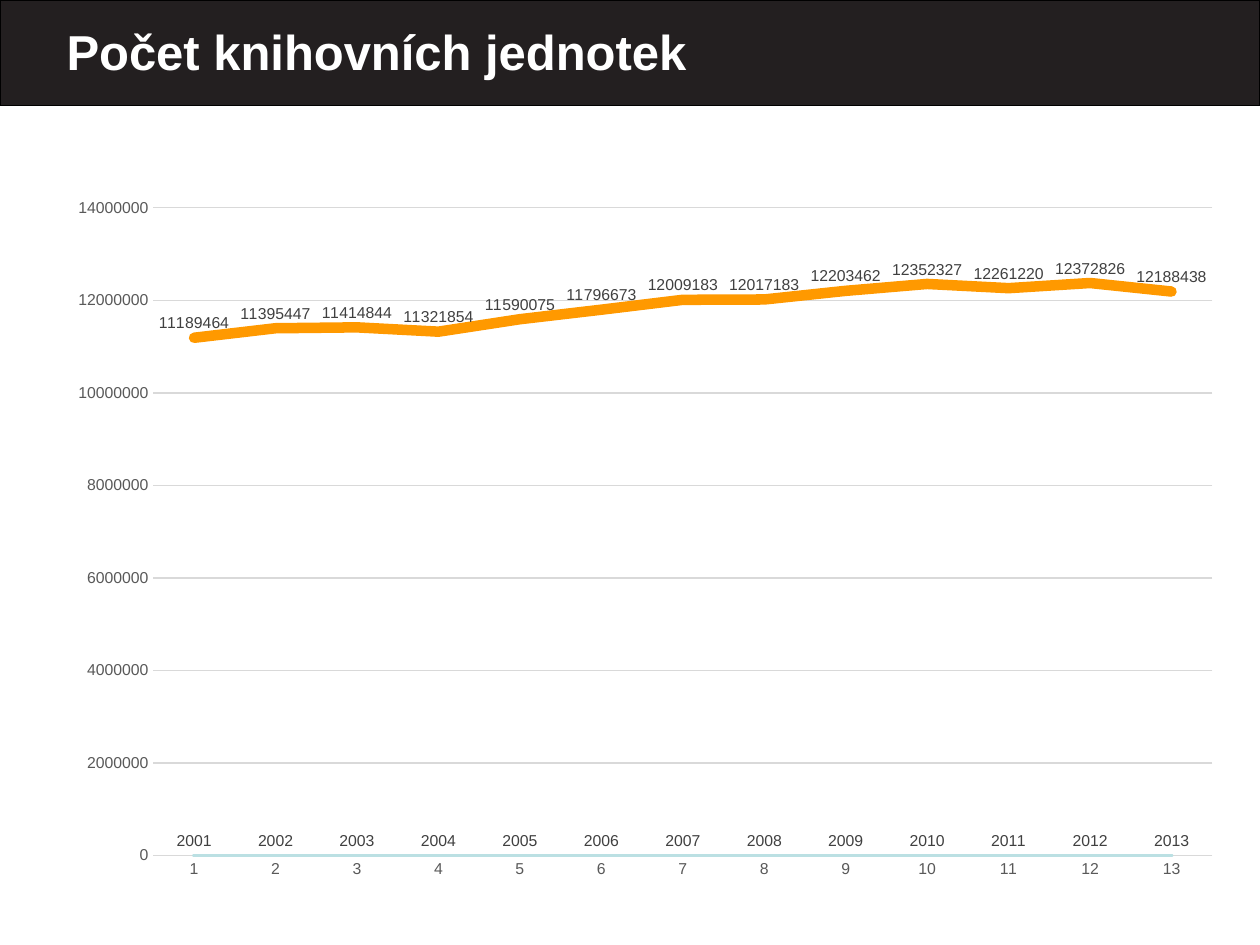
import dataclasses

import lxml.etree
import pptx
import pptx.chart.data
import pptx.dml.color
import pptx.enum.chart
import pptx.enum.shapes
import pptx.enum.text
import pptx.oxml
import pptx.oxml.ns
import pptx.util


@dataclasses.dataclass(frozen=True)
class Theme:
    font: str = "Arial"
    band: str = "231F20"
    outline: str = "000000"
    title: str = "FFFFFF"
    years: str = "BBE0E3"
    units: str = "FF9900"
    axis_text: str = "595959"
    label_text: str = "404040"
    grid: str = "D9D9D9"
    title_size: float = 28
    chart_size: float = 10
    label_size: float = 9
    hairline: float = 0.75
    years_width: float = 2.25
    units_width: float = 6


THEME = Theme()
WIDTH, HEIGHT = pptx.util.Inches(10), pptx.util.Inches(7.5)
YEARS = range(2001, 2014)
UNITS = (
    11189464, 11395447, 11414844, 11321854, 11590075, 11796673, 12009183,
    12017183, 12203462, 12352327, 12261220, 12372826, 12188438,
)


def share(box, left, top, width, height):
    x, y, w, h = box
    return (int(x + w * left), int(y + h * top), int(w * width), int(h * height))


def rgb(color):
    return pptx.dml.color.RGBColor.from_string(color)


def style_font(font, size, color, bold=False):
    font.name = THEME.font
    font.size = pptx.util.Pt(size)
    font.bold = bold
    font.color.rgb = rgb(color)


def style_line(line, color, width):
    line.color.rgb = rgb(color)
    line.width = pptx.util.Pt(width)


def add_header(slide, box, wording):
    band = slide.shapes.add_shape(pptx.enum.shapes.MSO_SHAPE.RECTANGLE, *box)
    band.shadow.inherit = False
    band.fill.solid()
    band.fill.fore_color.rgb = rgb(THEME.band)
    style_line(band.line, THEME.outline, THEME.hairline)

    heading = slide.shapes.add_textbox(*share(box, 0.043, 0.06, 0.9, 0.85))
    frame = heading.text_frame
    frame.word_wrap = True
    frame.vertical_anchor = pptx.enum.text.MSO_ANCHOR.MIDDLE
    run = frame.paragraphs[0].add_run()
    run.text = wording
    style_font(run.font, THEME.title_size, THEME.title, bold=True)


def style_axis(axis):
    axis.major_tick_mark = pptx.enum.chart.XL_TICK_MARK.NONE
    axis.minor_tick_mark = pptx.enum.chart.XL_TICK_MARK.NONE
    style_font(axis.tick_labels.font, THEME.label_size, THEME.axis_text)


def style_series(series, color, width):
    series.smooth = False
    series.marker.style = pptx.enum.chart.XL_MARKER_STYLE.NONE
    style_line(series.format.line, color, width)
    outline = series.format.line.fill._xPr
    outline.set("cap", "rnd")
    lxml.etree.SubElement(outline, pptx.oxml.ns.qn("a:round"))
    labels = series.data_labels
    labels.show_value = True
    labels.position = pptx.enum.chart.XL_LABEL_POSITION.ABOVE
    labels.number_format = "General"
    labels.number_format_is_linked = False
    style_font(labels.font, THEME.label_size, THEME.label_text)


def set_plot_layout(chart, **shares):
    plot_area = chart._chartSpace.chart.plotArea
    for existing in plot_area.findall(pptx.oxml.ns.qn("c:layout")):
        plot_area.remove(existing)
    settings = {"layoutTarget": "inner", "xMode": "edge", "yMode": "edge", **shares}
    tags = "".join(f'<c:{key} val="{value}"/>' for key, value in settings.items())
    plot_area.insert(0, pptx.oxml.parse_xml(
        f'<c:layout {pptx.oxml.ns.nsdecls("c")}>'
        f"<c:manualLayout>{tags}</c:manualLayout></c:layout>"
    ))


def add_units_chart(slide, box):
    holdings = pptx.chart.data.CategoryChartData()
    holdings.categories = [str(n) for n in range(1, len(YEARS) + 1)]
    holdings.add_series("Series 1", YEARS)
    holdings.add_series("Series 2", UNITS)
    chart = slide.shapes.add_chart(
        pptx.enum.chart.XL_CHART_TYPE.LINE_STACKED, *box, holdings
    ).chart
    chart.has_legend = False
    chart.has_title = False
    style_font(chart.font, THEME.chart_size, THEME.outline)
    set_plot_layout(chart, x=0.084, y=0.032, w=0.897, h=0.914)

    plot = chart.plots[0]
    plot.vary_by_categories = False
    looks = ((THEME.years, THEME.years_width), (THEME.units, THEME.units_width))
    for series, look in zip(plot.series, looks):
        style_series(series, *look)

    style_axis(chart.category_axis)
    style_line(chart.category_axis.format.line, THEME.grid, THEME.hairline)
    scale = chart.value_axis
    style_axis(scale)
    scale.minimum_scale, scale.maximum_scale, scale.major_unit = 0, 14000000, 2000000
    scale.format.line.fill.background()
    scale.has_major_gridlines = True
    style_line(scale.major_gridlines.format.line, THEME.grid, THEME.hairline)


def main():
    deck = pptx.Presentation()
    deck.slide_width, deck.slide_height = WIDTH, HEIGHT
    slide = deck.slides.add_slide(deck.slide_layouts[6])
    page = (0, 0, WIDTH, HEIGHT)
    add_header(slide, share(page, 0, 0, 1, 0.112), "Počet knihovních jednotek")
    add_units_chart(slide, share(page, 0.043, 0.196, 0.937, 0.75))
    deck.save("out.pptx")


if __name__ == "__main__":
    main()
